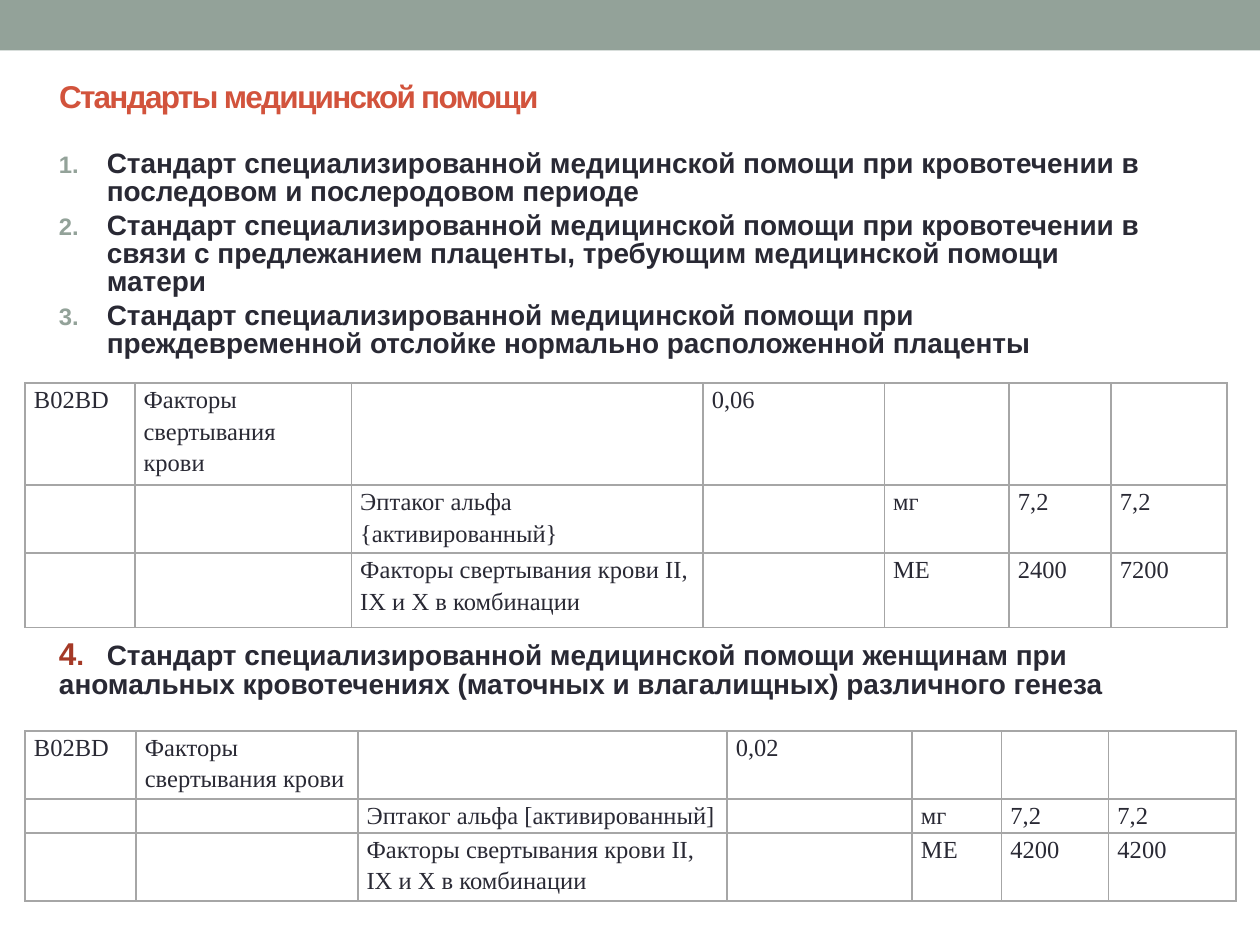
from lxml.etree import SubElement
from pptx import Presentation
from pptx.dml.color import RGBColor
from pptx.enum.shapes import MSO_SHAPE
from pptx.oxml.ns import qn
from pptx.util import Inches, Pt

SAGE, RED, RUST, INK, GRAY = "93A299", "D2533C", "A53926", "292934", "A6A6A6"

TITLE = "Стандарты медицинской помощи"
ITEMS = [
    "Стандарт специализированной медицинской помощи при кровотечении в последовом и послеродовом периоде",
    "Стандарт специализированной медицинской помощи при кровотечении в связи с предлежанием плаценты, "
    "требующим медицинской помощи матери",
    "Стандарт специализированной медицинской помощи при преждевременной отслойке "
    "нормально расположенной плаценты",
]
FOURTH = [
    ("4", 18, RUST),
    (".\t", 16, RUST),
    ("Стандарт специализированной медицинской помощи женщинам при аномальных кровотечениях "
     "(маточных и влагалищных) различного генеза", 16, INK),
]
GROUP = "Факторы свертывания крови"
COMBO = "Факторы свертывания крови II, IX и X в комбинации"
TABLES = [
    {"top": 3.04,
     "cols": [0.87, 1.72, 2.79, 1.44, 0.99, 0.81, 0.92],
     "rows": [0.81, 0.54, 0.59],
     "cells": [["B02BD", GROUP, "", "0,06", "", "", ""],
               ["", "", "Эптаког альфа {активированный}", "", "мг", "7,2", "7,2"],
               ["", "", COMBO, "", "МЕ", "2400", "7200"]]},
    {"top": 5.8,
     "cols": [0.88, 1.76, 2.93, 1.47, 0.71, 0.85, 1.01],
     "rows": [0.54, 0.27, 0.54],
     "cells": [["B02BD", GROUP, "", "0,02", "", "", ""],
               ["", "", "Эптаког альфа [активированный]", "", "мг", "7,2", "7,2"],
               ["", "", COMBO, "", "МЕ", "4200", "4200"]]},
]


def color(code):
    return RGBColor.from_string(code)


def add_run(para, text, size, code, face="Arial", bold=True):
    run = para.add_run()
    run.text = text
    font = run.font
    font.size, font.name, font.bold = Pt(size), face, bold
    font.color.rgb = color(code)
    return run


def add_box(slide, left, top, width, height):
    frame = slide.shapes.add_textbox(*map(Inches, (left, top, width, height))).text_frame
    frame.word_wrap = True
    return frame


def number(para):
    props = para._p.get_or_add_pPr()
    props.set("marL", str(Inches(0.38)))
    props.set("indent", str(-Inches(0.38)))
    SubElement(SubElement(props, qn("a:buClr")), qn("a:srgbClr"), val=SAGE)
    SubElement(props, qn("a:buSzPct"), val="85000")
    SubElement(props, qn("a:buFont"), typeface="+mj-lt")
    SubElement(props, qn("a:buAutoNum"), type="arabicPeriod")


def border(cell):
    props = cell._tc.get_or_add_tcPr()
    for i, side in enumerate(("a:lnL", "a:lnR", "a:lnT", "a:lnB")):
        line = SubElement(props, qn(side), w=str(Pt(1)))
        fill = SubElement(line, qn("a:solidFill"))
        SubElement(fill, qn("a:srgbClr"), val=GRAY)
        props.remove(line)
        props.insert(i, line)


def fill_cell(cell, text):
    cell.fill.background()
    cell.margin_left = cell.margin_right = Inches(0.07)
    cell.margin_top = cell.margin_bottom = 0
    border(cell)
    para = cell.text_frame.paragraphs[0]
    para.line_spacing = 1.15
    if text:
        add_run(para, text, 14, INK, "Times New Roman", False)
    else:
        SubElement(para._p, qn("a:endParaRPr"), sz="1400")


def add_grid(slide, data):
    cols, rows = data["cols"], data["rows"]
    table = slide.shapes.add_table(
        len(rows), len(cols), Inches(0.2), Inches(data["top"]),
        Inches(sum(cols)), Inches(sum(rows))).table
    table.first_row = table.horz_banding = False
    for col, width in zip(table.columns, cols):
        col.width = Inches(width)
    for row, height, texts in zip(table.rows, rows, data["cells"]):
        row.height = Inches(height)
        for cell, text in zip(row.cells, texts):
            fill_cell(cell, text)


def main():
    deck = Presentation()
    deck.slide_width, deck.slide_height = Inches(10), Inches(7.5)
    slide = deck.slides.add_slide(deck.slide_layouts[6])

    # Top band
    band = slide.shapes.add_shape(MSO_SHAPE.RECTANGLE, 0, 0, Inches(10), Inches(0.4))
    band.shadow.inherit = False
    band.fill.solid()
    band.fill.fore_color.rgb = color(SAGE)
    band.line.fill.background()

    # Title
    frame = add_box(slide, 0.37, 0.56, 7.58, 0.5)
    run = add_run(frame.paragraphs[0], TITLE, 18, RED)
    run.font._element.set("spc", "-100")

    # Numbered standards
    frame = add_box(slide, 0.37, 1.15, 8.96, 1.8)
    for i, text in enumerate(ITEMS):
        para = frame.add_paragraph() if i else frame.paragraphs[0]
        number(para)
        para.line_spacing = 0.84
        para.space_before = Pt(3 if i else 0)
        add_run(para, text, 16, INK)

    # Fourth standard, between the tables
    para = add_box(slide, 0.37, 5.03, 8.96, 0.6).paragraphs[0]
    stops = SubElement(para._p.get_or_add_pPr(), qn("a:tabLst"))
    SubElement(stops, qn("a:tab"), pos=str(Inches(0.38)), algn="l")
    para.line_spacing = 0.84
    for part in FOURTH:
        add_run(para, *part)

    # Drug tables
    for data in TABLES:
        add_grid(slide, data)

    deck.save("out.pptx")


if __name__ == "__main__":
    main()
